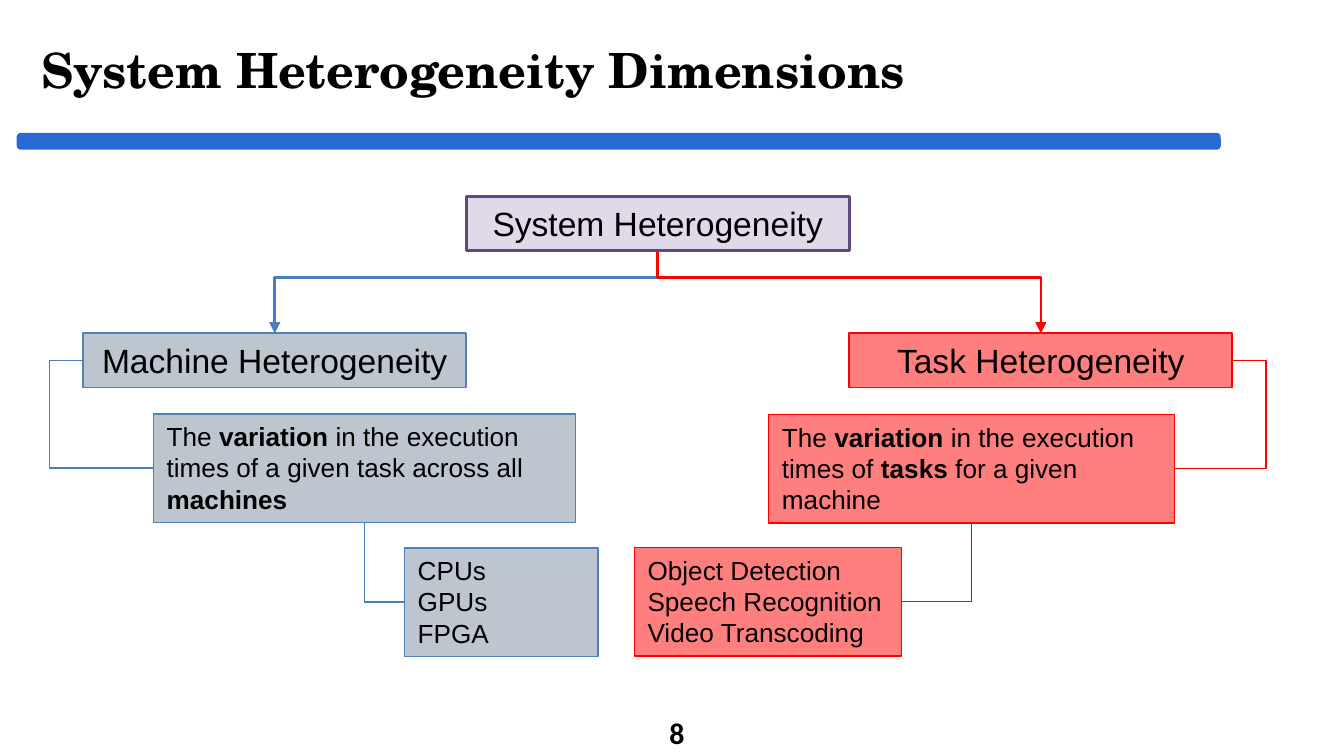
from dataclasses import dataclass
from typing import Any

from lxml import etree
from pptx import Presentation
from pptx import util as u
from pptx.dml.color import RGBColor
from pptx.enum import shapes, text
from pptx.oxml.ns import qn


@dataclass(frozen=True)
class Theme:
    sans: str = "Arial"
    serif: str = "TeX Gyre Schola"
    foot: str = "Calibri"
    ink: str = "000000"
    bar: str = "286AD4"
    blue: tuple = ("254061", 30, "4F81BD", "4B7EBC")
    red: tuple = ("FF0000", 50, "FF0000", "FF0000")
    plum: tuple = ("B3A2C7", 40, "604A7B", "604A7B")
    title: float = 26
    head: float = 18
    page: float = 16
    body: float = 14
    thin: float = 0.75
    edge: float = 1
    bold: float = 1.5


def rgb(code):
    return RGBColor.from_string(code)


def child(node, tag, **attrs):
    return etree.SubElement(node, qn(tag), **attrs)


def mid(area):
    left, top, wide, high = area
    return left + wide / 2, top + high / 2


def flank(area, side):
    x, y = mid(area)
    return x + side * area[2] / 2, y


@dataclass
class Deck:
    theme: Theme
    slide: Any

    def fill_text(self, shape, paras, size, font, align, anchor):
        frame = shape.text_frame
        frame.word_wrap = True
        frame.vertical_anchor = anchor
        for i, runs in enumerate(paras):
            para = frame.paragraphs[0] if i == 0 else frame.add_paragraph()
            para.alignment = align
            for words, bold in runs:
                run = para.add_run()
                run.text = words
                run.font.size = u.Pt(size)
                run.font.name = font
                run.font.bold = bold
                run.font.color.rgb = rgb(self.theme.ink)

    def label(self, area, words, size, font, align):
        shape = self.slide.shapes.add_textbox(*map(u.Pt, area))
        self.fill_text(shape, [[(words, True)]], size, font, align,
                       text.MSO_ANCHOR.MIDDLE)

    def block(self, kind, area, fill, line, width):
        shape = self.slide.shapes.add_shape(kind, *map(u.Pt, area))
        shape.shadow.inherit = False
        shape.fill.solid()
        shape.fill.fore_color.rgb = rgb(fill)
        shape.line.color.rgb = rgb(line)
        shape.line.width = u.Pt(width)
        return shape

    def rule(self, area):
        self.block(shapes.MSO_SHAPE.ROUNDED_RECTANGLE, area,
                   self.theme.bar, self.theme.bar, 2)

    def box(self, area, tone, paras, size, width, align):
        fill, alpha, line, _ = tone
        shape = self.block(shapes.MSO_SHAPE.RECTANGLE, area, fill, line, width)
        tint = shape._element.spPr.find(qn("a:solidFill"))[0]
        child(tint, "a:alpha", val=str(alpha * 1000))
        self.fill_text(shape, paras, size, self.theme.sans, align,
                       text.MSO_ANCHOR.TOP)

    def head(self, area, tone, words, width):
        self.box(area, tone, [[(words, False)]], self.theme.head, width,
                 text.PP_ALIGN.CENTER)

    def note(self, area, tone, paras):
        self.box(area, tone, paras, self.theme.body, self.theme.thin,
                 text.PP_ALIGN.LEFT)

    def link(self, start, end, tone, width, bend=None, down=False, arrow=False):
        line = self.slide.shapes.add_connector(
            shapes.MSO_CONNECTOR.ELBOW, *map(u.Pt, (*start, *end)))
        line.line.color.rgb = rgb(tone[3])
        line.line.width = u.Pt(width)
        props = line._element.spPr
        if down:
            self.turn(line, start, end)
        shape = props.find(qn("a:prstGeom"))
        if bend is None:
            shape.set("prst", "bentConnector2")
        else:
            child(shape.find(qn("a:avLst")), "a:gd", name="adj1",
                  fmla=f"val {round(bend * 100000)}")
        if arrow:
            child(props.find(qn("a:ln")), "a:tailEnd", type="triangle")
        child(props, "a:effectLst")

    def turn(self, line, start, end):
        (x1, y1), (x2, y2) = start, end
        wide, high = abs(y2 - y1), abs(x2 - x1)
        line.left = u.Pt((x1 + x2 - wide) / 2)
        line.top = u.Pt((y1 + y2 - high) / 2)
        line.width, line.height = u.Pt(wide), u.Pt(high)
        right = x2 > x1
        form = line._element.spPr.find(qn("a:xfrm"))
        form.set("rot", str((270 if right else 90) * 60000))
        form.set("flipH", "1" if right else "0")


def main():
    show = Presentation()
    show.slide_width, show.slide_height = u.Pt(720), u.Pt(405)
    theme = Theme()
    deck = Deck(theme, show.slides.add_slide(show.slide_layouts[6]))

    deck.rule((10, 72.2, 643, 7))
    deck.label((15, 7.2, 641, 60), "System Heterogeneity Dimensions",
               theme.title, theme.serif, text.PP_ALIGN.LEFT)
    deck.label((278.6, 381.6, 168, 21.6), "8", theme.page, theme.foot,
               text.PP_ALIGN.CENTER)

    wide, high, left, tall = 205.2, 29, 44.6, 58.2
    root = (left + wide, 105.4, wide, high)
    deck.head(root, theme.plum, "System Heterogeneity", theme.bold)
    foot = (mid(root)[0], root[1] + high)

    sides = [
        (theme.blue, -1, "Machine Heterogeneity", (82.2, 221.7, 226.2, tall),
         [("The ", False), ("variation", True),
          (" in the execution times of a given task across all", False),
          (" machines", True)],
         (216.7, 293.5, 103.7, tall), ["CPUs", "GPUs", "FPGA"]),
        (theme.red, 1, "Task Heterogeneity", (411.8, 222, 217.5, tall),
         [("The ", False), ("variation", True),
          (" in the execution times of ", False), ("tasks", True),
          (" for a given machine", False)],
         (339.8, 293.2, 143.3, tall),
         ["Object Detection", "Speech Recognition", "Video Transcoding"]),
    ]
    for tone, side, name, note, runs, area, items in sides:
        head = (root[0] + side * wide, 178.6, wide, high)
        deck.head(head, tone, name, theme.edge)
        deck.note(note, tone, [runs])
        deck.note(area, tone, [[(item, False)] for item in items])

        deck.link(foot, (mid(head)[0], head[1]), tone, theme.bold,
                  bend=0.32, down=True, arrow=True)
        start, end = flank(head, side), flank(note, side)
        deck.link(start, end, tone, theme.thin,
                  bend=-18 / abs(end[0] - start[0]))
        deck.link((mid(note)[0], note[1] + tall), flank(area, side),
                  tone, theme.thin, down=True)

    show.save("out.pptx")


if __name__ == "__main__":
    main()
